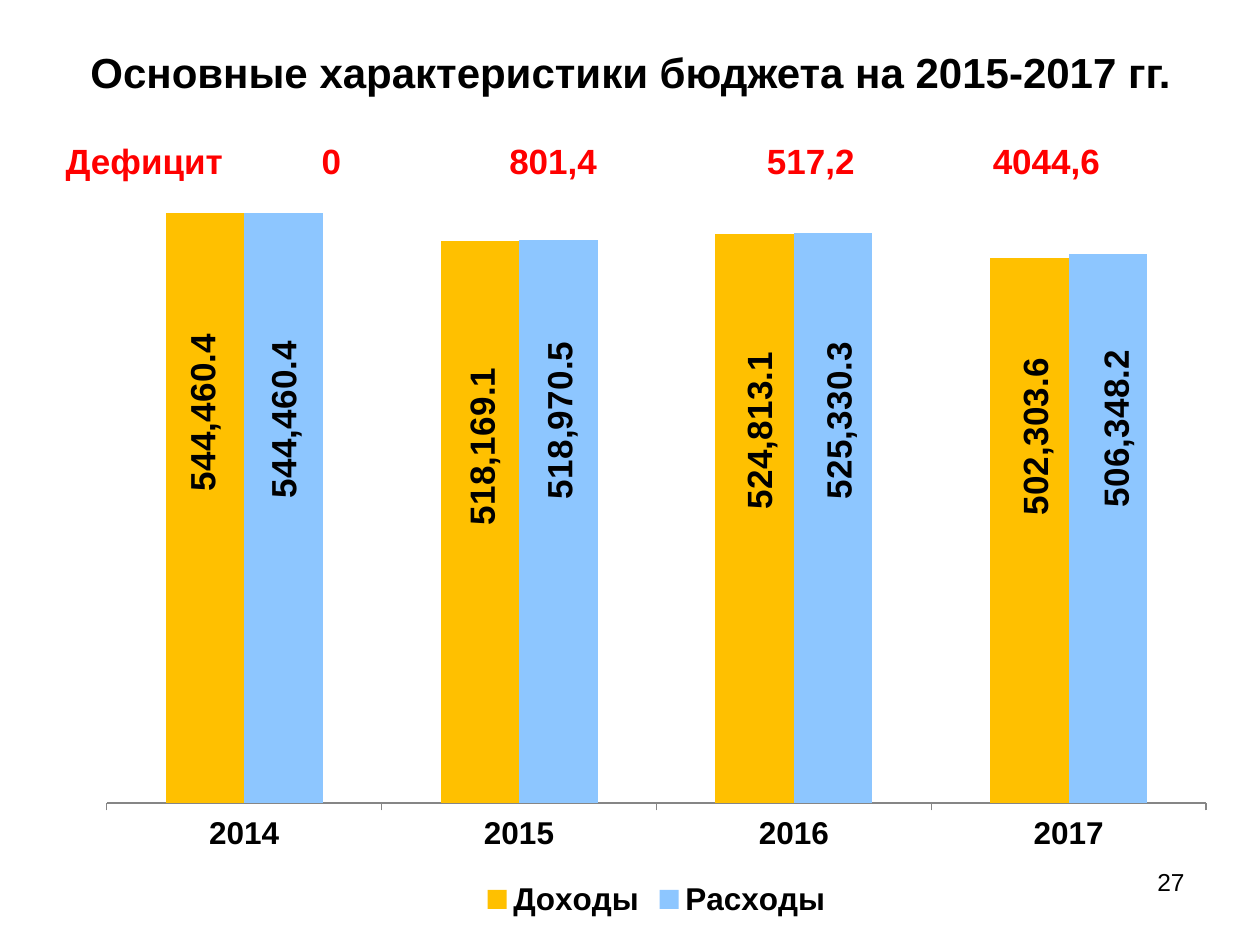
"""Build the slide on the main budget figures for 2015-2017."""
from pptx import Presentation
from pptx.chart.data import CategoryChartData
from pptx.dml.color import RGBColor
from pptx.enum.chart import XL_CHART_TYPE as ChartType
from pptx.enum.chart import XL_LABEL_POSITION as LabelPos
from pptx.enum.chart import XL_LEGEND_POSITION as LegendPos
from pptx.enum.chart import XL_TICK_LABEL_POSITION as TickLabelPos
from pptx.enum.chart import XL_TICK_MARK as TickMark
from pptx.enum.text import MSO_ANCHOR as Anchor
from pptx.enum.text import PP_ALIGN as Align
from pptx.oxml import parse_xml
from pptx.oxml.ns import nsdecls, qn
from pptx.util import Inches, Pt

TITLE = "Основные характеристики бюджета на 2015-2017 гг."
PAGE_NUMBER = "27"
DEFICIT = ["Дефицит", "0", "801,4", "517,2", "4044,6"]
DEFICIT_WIDTHS = [1.5, 1.42, 2.1, 1.99, 1.75]
YEARS = ["2014", "2015", "2016", "2017"]
NUMBER_FORMAT = "#,##0.0"
BUDGET = [
    {"name": "Доходы", "color": "income",
     "values": [544460.4, 518169.1, 524813.1, 502303.6],
     "label_shifts": [(-0.1, 14.7), (0.3, 15.4), (0.5, 14.3), (0.6, 12)]},
    {"name": "Расходы", "color": "spending",
     "values": [544460.4, 518970.5, 525330.3, 506348.2],
     "label_shifts": [(0.1, 15.6), (0.2, 12.2), (0.6, 13.1), (0.8, 11.5)]},
]
PLOT_PERCENT = {"x": 1.95, "y": 2.1, "w": 96.1, "h": 82.6}
COLORS = {"text": "000000", "deficit": "FF0000", "cell": "FFFFFF",
          "income": "FFC000", "spending": "8DC6FF", "axis": "868686"}


def rgb(name):
    return RGBColor.from_string(COLORS[name])


def style(font, size, color="text", bold=True):
    font.name, font.size, font.bold = "Arial", Pt(size), bold
    font.color.rgb = rgb(color)


def manual_layout(percents, extra=""):
    parts = "".join(f'<c:{key} val="{share / 100:.4f}"/>' for key, share in percents.items())
    return parse_xml(f'<c:layout {nsdecls("c")}><c:manualLayout>{extra}{parts}'
                     '</c:manualLayout></c:layout>')


def add_title(slide):
    title = slide.shapes.title
    title.left, title.top, title.width, title.height = map(Inches, (0.17, 0.3, 9.67, 0.53))
    title.text_frame.text = TITLE
    title.text_frame.vertical_anchor = Anchor.MIDDLE
    heading = title.text_frame.paragraphs[0]
    heading.alignment = Align.CENTER
    style(heading.font, 24)


def label_points(series, shifts):
    for index, (dx, dy) in enumerate(shifts):
        label = series.points[index].data_label
        style(label.font, 20)
        label.position = LabelPos.INSIDE_END
        element = series._element.findall(f'.//{qn("c:dLbl")}')[index]
        body = element.find(f'.//{qn("a:bodyPr")}')
        body.set("rot", "-5400000")
        body.set("vert", "horz")
        element.insert(1, manual_layout({"x": dx, "y": dy}))
        element.insert(2, parse_xml(f'<c:numFmt {nsdecls("c")} formatCode="{NUMBER_FORMAT}" '
                                    'sourceLinked="0"/>'))
    labels = series.data_labels
    labels.show_value = True
    labels.number_format, labels.number_format_is_linked = NUMBER_FORMAT, False
    style(labels.font, 20)
    for leader_lines in series._element.iter(qn("c:showLeaderLines")):
        leader_lines.set("val", "0")


def add_budget_chart(slide):
    data = CategoryChartData(number_format=NUMBER_FORMAT)
    data.categories = YEARS
    for entry in BUDGET:
        data.add_series(entry["name"], entry["values"])
    chart = slide.shapes.add_chart(ChartType.COLUMN_CLUSTERED,
                                   *map(Inches, (0.67, 1.08, 9.08, 6.25)), data).chart
    style(chart.font, 18)
    chart.has_title = False
    chart.has_legend = True
    chart.legend.position = LegendPos.BOTTOM
    chart.legend.include_in_layout = False
    style(chart.legend.font, 18)

    amounts = chart.value_axis
    amounts.minimum_scale, amounts.maximum_scale = 200, 600000
    amounts.has_major_gridlines = False
    amounts.visible = False
    years = chart.category_axis
    years.major_tick_mark = TickMark.OUTSIDE
    years.tick_label_position = TickLabelPos.LOW
    years.format.line.color.rgb = rgb("axis")
    style(years.tick_labels.font, 18)

    plot = chart.plots[0]
    plot.gap_width, plot.overlap, plot.vary_by_categories = 150, 0, False
    for series, entry in zip(plot.series, BUDGET):
        series.format.fill.solid()
        series.format.fill.fore_color.rgb = rgb(entry["color"])
        label_points(series, entry["label_shifts"])

    area = chart._chartSpace.find(f'.//{qn("c:plotArea")}')
    for automatic in area.findall(qn("c:layout")):
        area.remove(automatic)
    area.insert(0, manual_layout(PLOT_PERCENT, '<c:layoutTarget val="inner"/>'
                                 '<c:xMode val="edge"/><c:yMode val="edge"/>'))


def add_page_number(slide):
    box = slide.shapes.add_textbox(*map(Inches, (7.17, 6.83, 2.33, 0.52)))
    box.text_frame.word_wrap = True
    number = box.text_frame.paragraphs[0]
    number.text, number.alignment = PAGE_NUMBER, Align.RIGHT
    style(number.font, 14, bold=False)


def add_deficit_table(slide):
    table = slide.shapes.add_table(1, len(DEFICIT), *map(Inches, (0.42, 1.08, 8.75, 0.42))).table
    table.first_row = table.horz_banding = False
    for index, (words, width) in enumerate(zip(DEFICIT, DEFICIT_WIDTHS)):
        table.columns[index].width = Inches(width)
        cell = table.cell(0, index)
        cell.fill.solid()
        cell.fill.fore_color.rgb = rgb("cell")
        cell.text = words
        paragraph = cell.text_frame.paragraphs[0]
        paragraph.alignment = Align.CENTER if index else Align.LEFT
        style(paragraph.font, 20, "deficit")


def main():
    deck = Presentation()
    deck.slide_width, deck.slide_height = Inches(10), Inches(7.5)
    slide = deck.slides.add_slide(deck.slide_layouts[5])
    add_title(slide)
    add_budget_chart(slide)
    add_page_number(slide)
    add_deficit_table(slide)
    deck.save("out.pptx")


if __name__ == "__main__":
    main()
